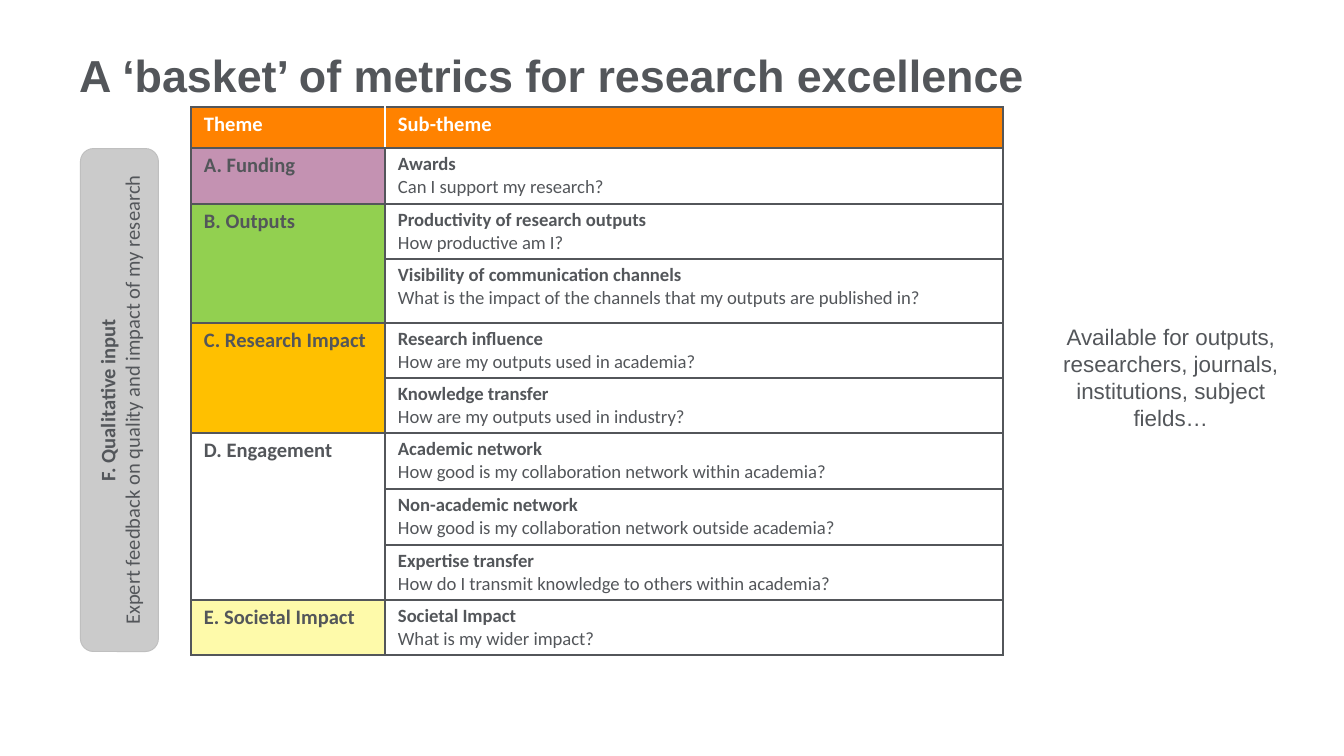
"""Build a slide with a themed table of research metrics."""
from dataclasses import dataclass

import lxml.etree
import pptx
import pptx.dml.color
import pptx.enum.shapes
import pptx.enum.text
import pptx.oxml.ns
import pptx.util

EMU_PER_PX = 9144000 / 1344
INK = "53565A"
WHITE = "FFFFFF"
ORANGE = "FF8200"
GREY = "BFBFBF"
TABLE_LEFT, TABLE_TOP = 191, 107
COLUMN_WIDTHS = (194, 618)
ROW_HEIGHTS = (41, 56, 55, 64, 55, 55, 56, 56, 55, 55)
CENTER = pptx.enum.text.PP_ALIGN.CENTER
LEFT = pptx.enum.text.PP_ALIGN.LEFT
MIDDLE = pptx.enum.text.MSO_ANCHOR.MIDDLE


@dataclass
class Line:
    """One paragraph and its font."""

    text: str
    size: int
    bold: bool = False
    color: str = INK
    font: str = "Calibri"


@dataclass
class Theme:
    """A theme with its fill and its (sub-theme, question) pairs."""

    name: str
    fill: str
    subthemes: list[tuple[str, str]]


THEMES = [
    Theme("A. Funding", "C492B2", [("Awards", "Can I support my research?")]),
    Theme("B. Outputs", "92D050", [
        ("Productivity of research outputs", "How productive am I?"),
        ("Visibility of communication channels",
         "What is the impact of the channels that my outputs are published in?"),
    ]),
    Theme("C. Research Impact", "FFC000", [
        ("Research influence", "How are my outputs used in academia?"),
        ("Knowledge transfer", "How are my outputs used in industry?"),
    ]),
    Theme("D. Engagement", WHITE, [
        ("Academic network", "How good is my collaboration network within academia?"),
        ("Non-academic network", "How good is my collaboration network outside academia?"),
        ("Expertise transfer", "How do I transmit knowledge to others within academia?"),
    ]),
    Theme("E. Societal Impact", "FEFAAA", [("Societal Impact", "What is my wider impact?")]),
]


def px(length: int) -> int:
    """Turn pixels into EMU."""
    return pptx.util.Emu(round(length * EMU_PER_PX))


def rgb(color: str) -> pptx.dml.color.RGBColor:
    """Turn a hex string into a colour."""
    return pptx.dml.color.RGBColor.from_string(color)


def write_lines(frame, lines: list[Line], alignment=LEFT) -> None:
    """Fill a text frame with one paragraph per line."""
    frame.word_wrap = True
    for index, line in enumerate(lines):
        paragraph = frame.add_paragraph() if index else frame.paragraphs[0]
        paragraph.text = line.text
        paragraph.alignment = alignment
        paragraph.font.name = line.font
        paragraph.font.size = pptx.util.Pt(line.size)
        paragraph.font.bold = line.bold
        paragraph.font.color.rgb = rgb(line.color)


def add_text(slide, left: int, top: int, width: int, height: int, line: Line, alignment=LEFT):
    """Add a text box and return its text frame."""
    frame = slide.shapes.add_textbox(px(left), px(top), px(width), px(height)).text_frame
    write_lines(frame, [line], alignment)
    return frame


def style_cell(cell, fill: str, left: str = INK, right: str = INK) -> None:
    """Set the borders, fill and margins of a cell."""
    properties = cell._tc.get_or_add_tcPr()
    for tag, color in (("a:lnL", left), ("a:lnR", right), ("a:lnT", INK), ("a:lnB", INK)):
        border = lxml.etree.SubElement(properties, pptx.oxml.ns.qn(tag), w=str(pptx.util.Pt(1)))
        solid = lxml.etree.SubElement(border, pptx.oxml.ns.qn("a:solidFill"))
        lxml.etree.SubElement(solid, pptx.oxml.ns.qn("a:srgbClr"), val=color)
    cell.fill.solid()
    cell.fill.fore_color.rgb = rgb(fill)
    cell.margin_left = cell.margin_right = px(13)
    cell.margin_top = cell.margin_bottom = px(5)


def add_theme_table(slide) -> None:
    """Add the table of themes and sub-themes."""
    table = slide.shapes.add_table(
        len(ROW_HEIGHTS), len(COLUMN_WIDTHS), px(TABLE_LEFT), px(TABLE_TOP),
        px(sum(COLUMN_WIDTHS)), px(sum(ROW_HEIGHTS))).table
    table.horz_banding = False
    for column, width in zip(table.columns, COLUMN_WIDTHS):
        column.width = px(width)
    for row, height in zip(table.rows, ROW_HEIGHTS):
        row.height = px(height)

    style_cell(table.cell(0, 0), ORANGE, right=WHITE)
    style_cell(table.cell(0, 1), ORANGE, left=WHITE)
    for column_index, heading in enumerate(("Theme", "Sub-theme")):
        write_lines(table.cell(0, column_index).text_frame, [Line(heading, 11, True, WHITE)])

    first = 1
    for theme in THEMES:
        last = first + len(theme.subthemes) - 1
        for row_index, (subtheme, question) in enumerate(theme.subthemes, first):
            style_cell(table.cell(row_index, 0), theme.fill)
            cell = table.cell(row_index, 1)
            style_cell(cell, WHITE)
            write_lines(cell.text_frame, [Line(subtheme, 10, True), Line(question, 10)])
        if last > first:
            table.cell(first, 0).merge(table.cell(last, 0))
        write_lines(table.cell(first, 0).text_frame, [Line(theme.name, 11, True)])
        first = last + 1


def add_qualitative_bar(slide) -> None:
    """Add the upright rounded bar beside the table."""
    shape = slide.shapes.add_shape(
        pptx.enum.shapes.MSO_SHAPE.ROUNDED_RECTANGLE, px(-132), px(361), px(503), px(78))
    shape.rotation = 270
    shape.shadow.inherit = False
    shape.fill.solid()
    shape.fill.fore_color.rgb = rgb(GREY)
    color = shape._element.spPr.find(".//" + pptx.oxml.ns.qn("a:srgbClr"))
    lxml.etree.SubElement(color, pptx.oxml.ns.qn("a:alpha"), val="80000")
    shape.line.color.rgb = rgb(GREY)
    shape.line.width = pptx.util.Pt(0.5)
    frame = shape.text_frame
    frame.vertical_anchor = MIDDLE
    frame.margin_left = frame.margin_right = px(16)
    frame.margin_top = frame.margin_bottom = px(8)
    write_lines(frame, [
        Line("F. Qualitative input", 11, True),
        Line("Expert feedback on quality and impact of my research", 11),
    ], CENTER)


def main() -> None:
    """Build and save the presentation."""
    presentation = pptx.Presentation()
    presentation.slide_width, presentation.slide_height = px(1344), px(756)
    slide = presentation.slides.add_slide(presentation.slide_layouts[6])
    title = add_text(slide, 66, 34, 1211, 46, Line(
        "A ‘basket’ of metrics for research excellence", 24, True, font="Arial"))
    title.vertical_anchor = MIDDLE
    title.paragraphs[0].line_spacing = pptx.util.Pt(48)
    add_qualitative_bar(slide)
    add_theme_table(slide)
    add_text(slide, 1023, 317, 296, 122, Line(
        "Available for outputs, researchers, journals, institutions, subject fields…",
        12, font="Arial"), CENTER)
    presentation.save("out.pptx")


if __name__ == "__main__":
    main()
